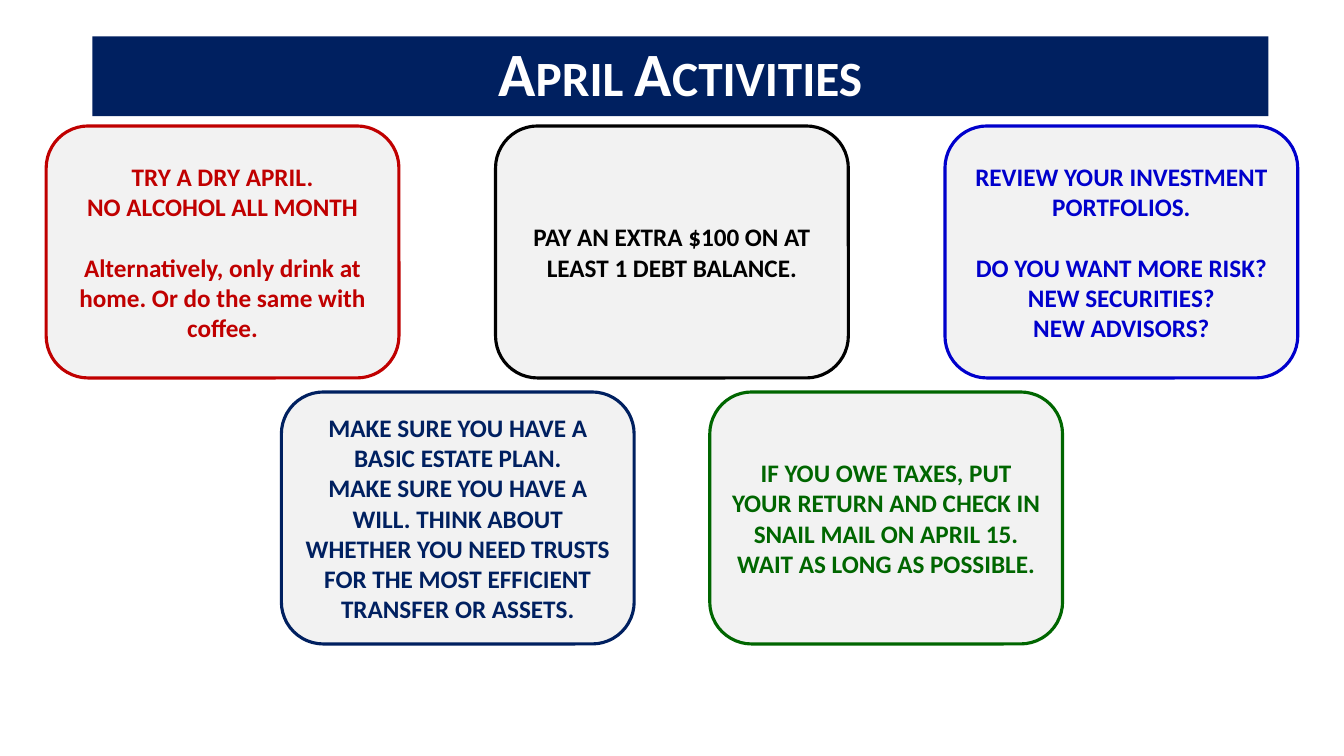
from pptx import Presentation
from pptx.dml.color import RGBColor
from pptx.enum.shapes import MSO_SHAPE
from pptx.enum.text import MSO_ANCHOR, PP_ALIGN
from pptx.util import Pt

RECTANGLE = MSO_SHAPE.RECTANGLE
ROUNDED = MSO_SHAPE.ROUNDED_RECTANGLE
MIDDLE = MSO_ANCHOR.MIDDLE
CENTER = PP_ALIGN.CENTER

NAVY = RGBColor(0x00, 0x20, 0x60)
RED = RGBColor(0xC0, 0x00, 0x00)
BLUE = RGBColor(0x00, 0x00, 0xCC)
GREEN = RGBColor(0x00, 0x66, 0x00)
BLACK = RGBColor(0x00, 0x00, 0x00)
WHITE = RGBColor(0xFF, 0xFF, 0xFF)
PALE_GRAY = RGBColor(0xF2, 0xF2, 0xF2)

TITLE = "April Activities"
DRY_APRIL = (RED, [
    ["TRY A DRY APRIL.", "NO ALCOHOL ALL MONTH"],
    ["Alternatively, only drink at home. Or do the same with coffee."],
])
DEBT = (BLACK, [["PAY AN EXTRA $100 ON AT LEAST 1 DEBT BALANCE."]])
PORTFOLIO = (BLUE, [
    ["REVIEW YOUR INVESTMENT PORTFOLIOS."],
    ["DO YOU WANT MORE RISK?", "NEW SECURITIES?", "NEW ADVISORS?"],
])
ESTATE = (NAVY, [[
    "MAKE SURE YOU HAVE A BASIC ESTATE PLAN.",
    "MAKE SURE YOU HAVE A WILL. THINK ABOUT WHETHER YOU NEED TRUSTS "
    "FOR THE MOST EFFICIENT TRANSFER OR ASSETS.",
]])
TAXES = (GREEN, [[
    "IF YOU OWE TAXES, PUT YOUR RETURN AND CHECK IN SNAIL MAIL ON APRIL 15.",
    "WAIT AS LONG AS POSSIBLE.",
]])

ROWS = [
    {"left": 33, "step": 321, "cards": [DRY_APRIL, DEBT, PORTFOLIO]},
    {"left": 201, "step": 306, "cards": [ESTATE, TAXES]},
]
CARD_WIDTH, CARD_HEIGHT = 252, 180
FIRST_ROW_TOP, ROW_STEP = 90, 190
GROUP_GAP = 22


def add_panel(slide, kind, left, top, width, height, fill):
    shape = slide.shapes.add_shape(kind, Pt(left), Pt(top), Pt(width), Pt(height))
    shape.shadow.inherit = False
    shape.fill.solid()
    shape.fill.fore_color.rgb = fill
    shape.line.fill.background()
    shape.text_frame.word_wrap = True
    shape.text_frame.vertical_anchor = MIDDLE
    return shape


def style(paragraph, size, color):
    paragraph.alignment = CENTER
    paragraph.font.name = "Calibri"
    paragraph.font.size = Pt(size)
    paragraph.font.bold = True
    paragraph.font.color.rgb = color


def add_title(slide):
    shape = add_panel(slide, RECTANGLE, 66, 26, 840, 57, NAVY)
    paragraph = shape.text_frame.paragraphs[0]
    run = paragraph.add_run()
    run.text = TITLE
    run._r.get_or_add_rPr().set("cap", "small")
    paragraph.line_spacing = 0.9
    style(paragraph, 44, WHITE)


def add_card(slide, left, top, color, groups):
    shape = add_panel(slide, ROUNDED, left, top, CARD_WIDTH, CARD_HEIGHT, PALE_GRAY)
    shape.line.color.rgb = color
    shape.line.width = Pt(2.25)
    frame = shape.text_frame
    frame.text = "\n".join(line for group in groups for line in group)
    for paragraph in frame.paragraphs:
        style(paragraph, 18, color)
    for group in groups[1:]:
        start = next(p for p in frame.paragraphs if p.text == group[0])
        start.space_before = Pt(GROUP_GAP)


def main():
    presentation = Presentation()
    presentation.slide_width = Pt(960)
    presentation.slide_height = Pt(540)
    slide = presentation.slides.add_slide(presentation.slide_layouts[6])
    add_title(slide)
    for row_index, row in enumerate(ROWS):
        top = FIRST_ROW_TOP + row_index * ROW_STEP
        for column, (color, groups) in enumerate(row["cards"]):
            add_card(slide, row["left"] + column * row["step"], top, color, groups)
    presentation.save("out.pptx")


if __name__ == "__main__":
    main()
